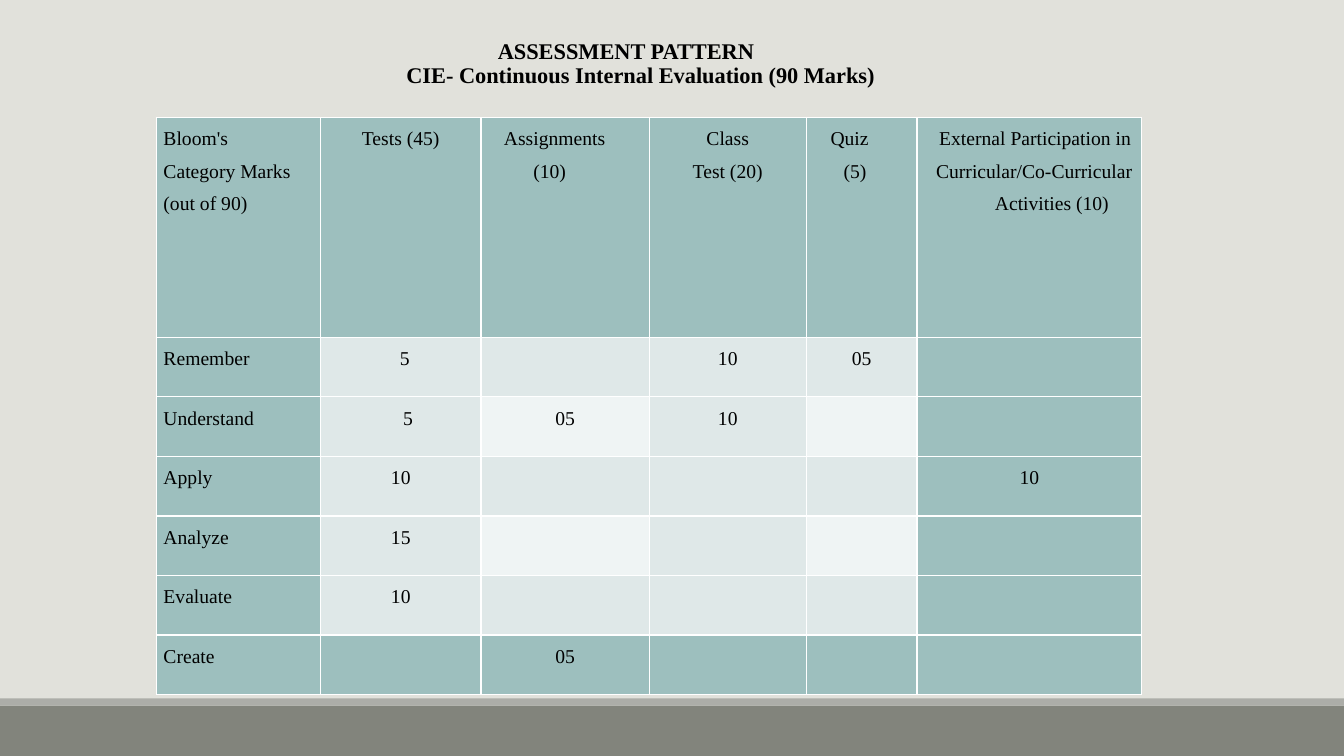
"""Build the assessment pattern slide with its continuous internal evaluation table."""
from dataclasses import dataclass

from lxml.etree import SubElement
from pptx import Presentation
from pptx.dml.color import RGBColor
from pptx.enum.shapes import MSO_SHAPE as Shape
from pptx.enum.text import MSO_ANCHOR as Anchor, MSO_AUTO_SIZE as AutoSize, PP_ALIGN as Align
from pptx.oxml.ns import qn
from pptx.util import Cm, Pt

BLACK = RGBColor(0x00, 0x00, 0x00)
BACKDROP = RGBColor(0xE1, 0xE1, 0xDB)
FOOTER = RGBColor(0x82, 0x84, 0x7C)
FOOTER_EDGE = RGBColor(0xAC, 0xAD, 0xA8)
TEAL = RGBColor(0x9D, 0xBF, 0xBE)
PALE = RGBColor(0xDF, 0xE8, 0xE8)
PALEST = RGBColor(0xEF, 0xF4, 0xF4)
BORDER = RGBColor(0xFF, 0xFF, 0xFF)
FONT = "Times New Roman"

COLUMN_WIDTHS = (4.14, 4.04, 4.24, 3.96, 2.79, 5.66)
HEADER_HEIGHT, LEVEL_HEIGHT = 5.54, 1.5


@dataclass(frozen=True)
class Line:
    """One paragraph with its indents in centimetres."""

    text: str
    left: float = 0
    first: float = 0
    right: float = 0
    align: Align = Align.CENTER


@dataclass(frozen=True)
class Band:
    """One full-width strip at the foot of the slide, in centimetres."""

    top: float
    height: float
    color: RGBColor


BANDS = (Band(17.78, 1.27, FOOTER), Band(17.6, 0.18, FOOTER_EDGE))

HEADING = (
    Line("ASSESSMENT PATTERN", left=0.1),
    Line("CIE- Continuous Internal Evaluation (90 Marks)", left=0.84),
)

HEADERS = (
    (Line("Bloom's", 0.18, align=Align.LEFT),
     Line("Category Marks (out of 90)", 0.18, align=Align.LEFT)),
    (Line("Tests (45)"),),
    (Line("Assignments (10)", 1.32, -0.74, 0.56, Align.LEFT),),
    (Line("Class"), Line("Test (20)")),
    (Line("Quiz (5)", 0.94, -0.33, 0.9, Align.LEFT),),
    (Line("External Participation in", 0.25, 0.05),
     Line("Curricular/Co-Curricular Activities (10)", 1.14, -0.89)),
)

LEVELS = {
    "Remember": {1: Line("5", 0.2), 3: Line("10"), 4: Line("05")},
    "Understand": {1: Line("5", 0.36), 2: Line("05"), 3: Line("10")},
    "Apply": {1: Line("10"), 5: Line("10")},
    "Analyze": {1: Line("15")},
    "Evaluate": {1: Line("10")},
    "Create": {2: Line("05")},
}


def write_lines(frame, lines: tuple[Line, ...], size: int, spacing: float, bold: bool) -> None:
    """Fill a text frame with formatted, indented paragraphs."""
    frame.text = "\n".join(line.text for line in lines)
    for paragraph, line in zip(frame.paragraphs, lines):
        paragraph.alignment = line.align
        paragraph.line_spacing = spacing
        properties = paragraph._p.get_or_add_pPr()
        properties.set("marL", str(Cm(line.left)))
        properties.set("marR", str(Cm(line.right)))
        properties.set("indent", str(Cm(line.first)))
        for run in paragraph.runs:
            run.font.name = FONT
            run.font.size = Pt(size)
            run.font.bold = bold
            run.font.color.rgb = BLACK


def draw_band(slide, band: Band, width: int) -> None:
    """Draw one footer strip."""
    strip = slide.shapes.add_shape(Shape.RECTANGLE, 0, Cm(band.top), width, Cm(band.height))
    strip.shadow.inherit = False
    strip.fill.solid()
    strip.fill.fore_color.rgb = band.color
    strip.line.fill.background()


def add_borders(cell) -> None:
    """Outline a cell on all four sides."""
    properties = cell._tc.get_or_add_tcPr()
    for side in ("lnL", "lnR", "lnT", "lnB"):
        edge = SubElement(properties, qn(f"a:{side}"), w=str(Pt(1)))
        SubElement(SubElement(edge, qn("a:solidFill")), qn("a:srgbClr"), val=str(BORDER))


def cell_color(row: int, column: int) -> RGBColor:
    """Return the fill for a table position."""
    if row in (0, len(LEVELS)) or column in (0, len(HEADERS) - 1):
        return TEAL
    return PALEST if row % 2 == 0 and column % 2 == 0 else PALE


def draw_marks(slide) -> None:
    """Draw the table of marks by category."""
    rows = [dict(enumerate(HEADERS))]
    for level, marks in LEVELS.items():
        name = Line(level, 0.18, align=Align.LEFT)
        rows.append({0: (name,)} | {column: (mark,) for column, mark in marks.items()})

    height = HEADER_HEIGHT + LEVEL_HEIGHT * len(LEVELS)
    marks_table = slide.shapes.add_table(
        len(rows), len(HEADERS), Cm(3.94), Cm(2.96), Cm(sum(COLUMN_WIDTHS)), Cm(height)
    ).table
    marks_table.first_row = False
    marks_table.horz_banding = False
    for column, width in zip(marks_table.columns, COLUMN_WIDTHS):
        column.width = Cm(width)
    for index, contents in enumerate(rows):
        marks_table.rows[index].height = Cm(LEVEL_HEIGHT if index else HEADER_HEIGHT)
        for column in range(len(HEADERS)):
            cell = marks_table.cell(index, column)
            cell.margin_left = cell.margin_right = cell.margin_top = cell.margin_bottom = 0
            add_borders(cell)
            cell.fill.solid()
            cell.fill.fore_color.rgb = cell_color(index, column)
            if column in contents:
                write_lines(cell.text_frame, contents[column], 14, 1.5, False)


def draw_heading(slide) -> None:
    """Place and format the slide title."""
    heading = slide.shapes.title
    heading.left, heading.top, heading.width, heading.height = Cm(0), Cm(0.94), Cm(31.45), Cm(1.37)
    frame = heading.text_frame
    frame.margin_left = frame.margin_right = Cm(0.13)
    frame.margin_top = frame.margin_bottom = Cm(0.08)
    frame.vertical_anchor = Anchor.MIDDLE
    frame.word_wrap = True
    frame.auto_size = AutoSize.SHAPE_TO_FIT_TEXT
    write_lines(frame, HEADING, 16, 0.9, True)


def main() -> None:
    """Assemble and save the presentation."""
    deck = Presentation()
    deck.slide_width, deck.slide_height = Cm(33.87), Cm(19.05)
    slide = deck.slides.add_slide(deck.slide_layouts[5])
    slide.background.fill.solid()
    slide.background.fill.fore_color.rgb = BACKDROP
    for band in BANDS:
        draw_band(slide, band, deck.slide_width)
    draw_marks(slide)
    draw_heading(slide)
    deck.save("out.pptx")


if __name__ == "__main__":
    main()
